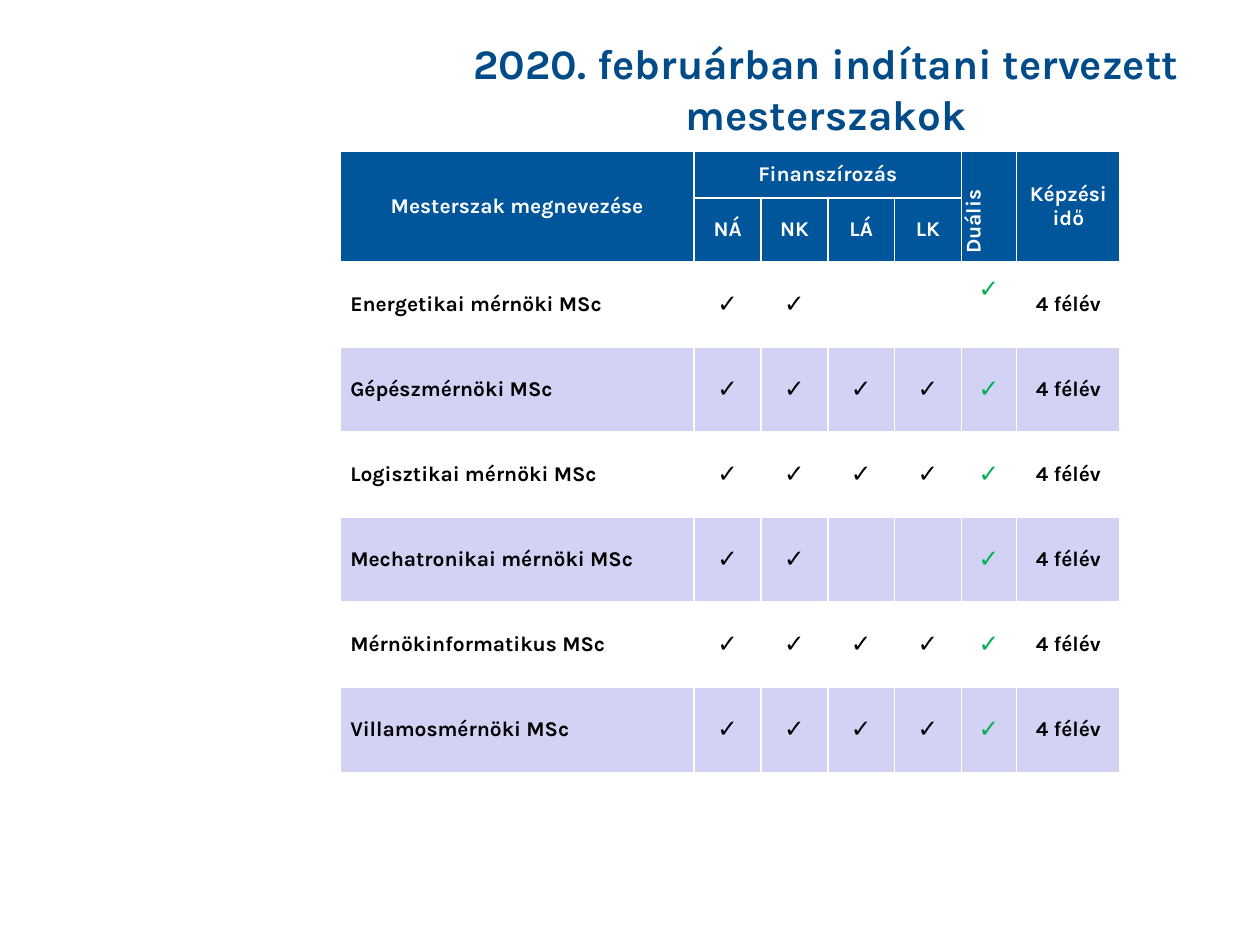
from pptx import Presentation
from pptx.dml.color import RGBColor
from pptx.enum.text import MSO_ANCHOR as Anchor, PP_ALIGN as Align
from pptx.util import Inches, Pt

COLORS = {
    "title": "014B89",
    "header": "01559B",
    "band": "D2D2F4",
    "white": "FFFFFF",
    "black": "000000",
    "dual": "00B050",
}
COLUMN_WIDTHS = [2.81, 0.53, 0.53, 0.53, 0.53, 0.44, 0.82]
ROW_HEIGHTS = [0.37, 0.51] + [0.675] * 6
FUNDING = ["NÁ", "NK", "LÁ", "LK"]
PROGRAMMES = [
    ("Energetikai mérnöki MSc", ["NÁ", "NK"]),
    ("Gépészmérnöki MSc", FUNDING),
    ("Logisztikai mérnöki MSc", FUNDING),
    ("Mechatronikai mérnöki MSc", ["NÁ", "NK"]),
    ("Mérnökinformatikus MSc", FUNDING),
    ("Villamosmérnöki MSc", FUNDING),
]
CHECK = "✓"


def write_text(frame, text, size=12, color="black", align=Align.CENTER):
    """Put one formatted paragraph into a text frame."""
    paragraph = frame.paragraphs[0]
    paragraph.alignment = align
    run = paragraph.add_run()
    run.text = text
    run.font.name = "Karla"
    run.font.size = Pt(size)
    run.font.bold = True
    run.font.color.rgb = RGBColor.from_string(COLORS[color])


def set_margins(cell, left=0, right=0, top=0, bottom=0):
    """Set the four inner margins of a cell in inches."""
    cell.margin_left, cell.margin_right = Inches(left), Inches(right)
    cell.margin_top, cell.margin_bottom = Inches(top), Inches(bottom)


def fill_cell(cell, text, fill=None, **text_format):
    """Fill, centre and write one table cell."""
    if fill:
        cell.fill.solid()
        cell.fill.fore_color.rgb = RGBColor.from_string(COLORS[fill])
    else:
        cell.fill.background()
    cell.vertical_anchor = Anchor.MIDDLE
    set_margins(cell)
    if text:
        write_text(cell.text_frame, text, **text_format)


def add_title(slide):
    """Place and write the slide title."""
    title = slide.shapes.title
    title.left, title.top = Inches(3.46), Inches(0.28)
    title.width, title.height = Inches(6.19), Inches(0.84)
    title.text_frame.word_wrap = True
    title.text_frame.vertical_anchor = Anchor.MIDDLE
    write_text(title.text_frame, "2020. februárban indítani tervezett mesterszakok",
               size=24, color="title")


def add_programme_table(slide):
    """Add the empty table with its column and row sizes."""
    table = slide.shapes.add_table(
        len(ROW_HEIGHTS), len(COLUMN_WIDTHS), Inches(2.7), Inches(1.2),
        Inches(sum(COLUMN_WIDTHS)), Inches(sum(ROW_HEIGHTS))).table
    table.first_row = table.horz_banding = False
    for column, width in zip(table.columns, COLUMN_WIDTHS):
        column.width = Inches(width)
    for row, height in zip(table.rows, ROW_HEIGHTS):
        row.height = Inches(height)
    return table


def write_header(table):
    """Merge and write the two header rows."""
    top_labels = ["Mesterszak megnevezése", "Finanszírozás", "", "", "", "Duális", "Képzési idő"]
    for row, labels in enumerate([top_labels, ["", *FUNDING, "", ""]]):
        for column, label in enumerate(labels):
            fill_cell(table.cell(row, column), label, fill="header", color="white")
    table.cell(0, 1).merge(table.cell(0, 4))
    for column in (0, 5, 6):
        table.cell(0, column).merge(table.cell(1, column))
    dual = table.cell(0, 5)
    dual._tc.get_or_add_tcPr().set("vert", "vert270")
    set_margins(dual, right=0.24)


def write_programmes(table):
    """Write one banded row per master's programme."""
    for index, (name, offered) in enumerate(PROGRAMMES):
        cells = table.rows[index + 2].cells
        fill = "band" if index % 2 else None
        fill_cell(cells[0], name, fill=fill, align=Align.LEFT)
        set_margins(cells[0], left=0.08)
        for cell, funding in zip(cells[1:5] if isinstance(cells, list) else list(cells)[1:5], FUNDING):
            fill_cell(cell, CHECK if funding in offered else "", fill=fill, size=14)
        fill_cell(cells[5], CHECK, fill=fill, size=14, color="dual")
        fill_cell(cells[6], "4 félév", fill=fill)
    set_margins(table.cell(2, 5), bottom=0.24)


def main():
    """Build and save the slide."""
    deck = Presentation()
    deck.slide_width, deck.slide_height = Inches(10), Inches(7.5)
    slide = deck.slides.add_slide(deck.slide_layouts[5])
    add_title(slide)
    table = add_programme_table(slide)
    write_header(table)
    write_programmes(table)
    deck.save("out.pptx")


if __name__ == "__main__":
    main()
